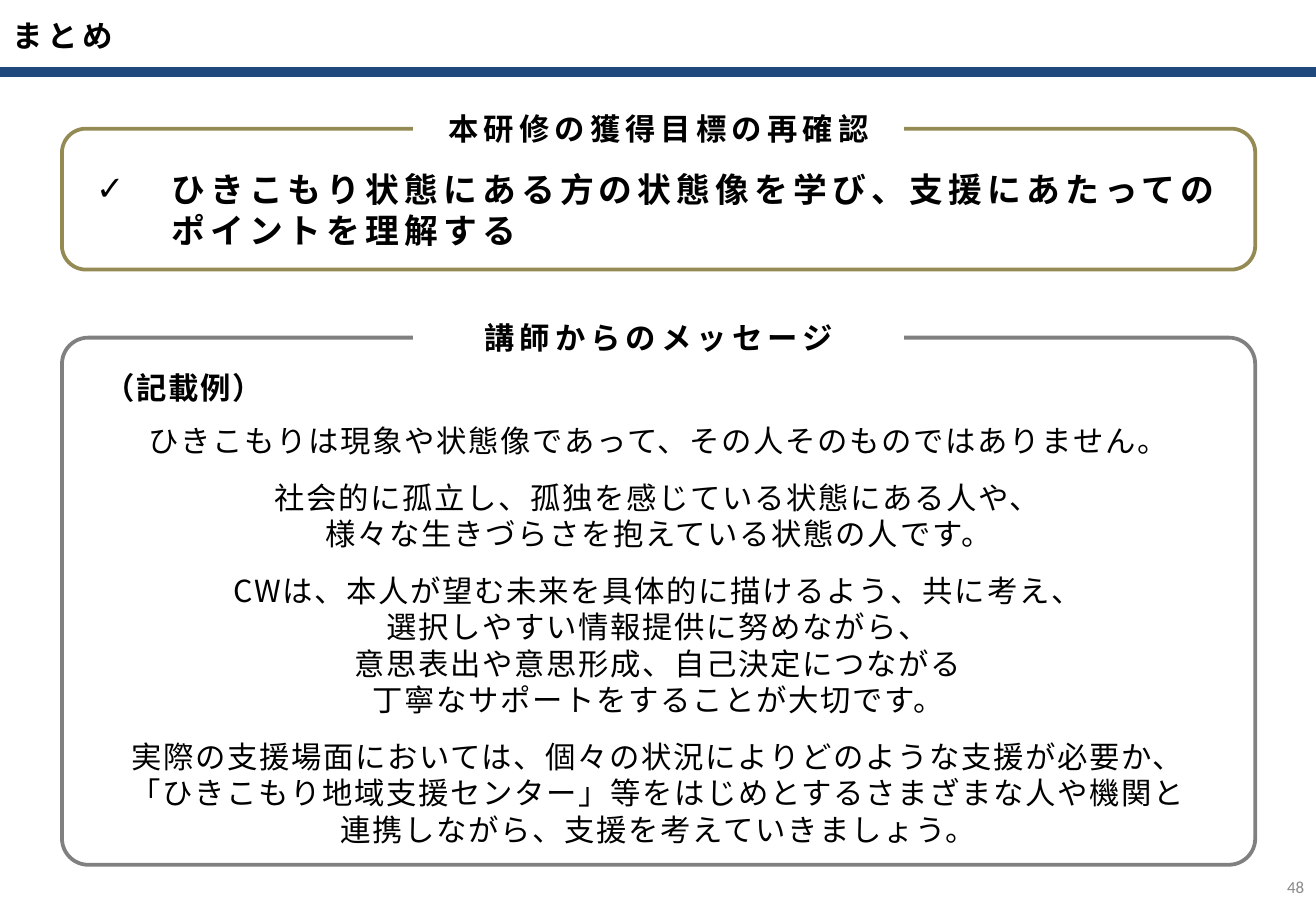
import pptx
import pptx.util
import pptx.dml.color
import pptx.enum.shapes
import pptx.enum.text
import pptx.oxml
import pptx.oxml.ns
from pptx.util import Inches

COLORS = {"navy": "1F497D", "olive": "948A54", "gray": "808080",
          "black": "000000", "number": "898989", "white": "FFFFFF"}
JAPANESE = "Noto Sans CJK JP"
ALIGN = pptx.enum.text.PP_ALIGN
ANCHOR = pptx.enum.text.MSO_ANCHOR
SHAPE = pptx.enum.shapes.MSO_SHAPE
FRAME_LEFT, FRAME_WIDTH = 0.51, 9.82
HEADING_WIDTH, HEADING_HEIGHT = 4.04, 0.4

GOAL = "ひきこもり状態にある方の状態像を学び、支援にあたってのポイントを理解する"
MESSAGES = [
    "ひきこもりは現象や状態像であって、その人そのものではありません。",
    "社会的に孤立し、孤独を感じている状態にある人や、\v様々な生きづらさを抱えている状態の人です。",
    "CWは、本人が望む未来を具体的に描けるよう、共に考え、\v選択しやすい情報提供に努めながら、\v"
    "意思表出や意思形成、自己決定につながる\v丁寧なサポートをすることが大切です。",
    "実際の支援場面においては、個々の状況によりどのような支援が必要か、\v"
    "「ひきこもり地域支援センター」等をはじめとするさまざまな人や機関と\v"
    "連携しながら、支援を考えていきましょう。",
]


def rgb(name):
    return pptx.dml.color.RGBColor.from_string(COLORS[name])


def add_element(parent, tag, **attributes):
    element = pptx.oxml.parse_xml(f"<a:{tag} {pptx.oxml.ns.nsdecls('a')}/>")
    for name, value in attributes.items():
        element.set(name, value)
    parent.append(element)


def place(shape, left, top, width, height):
    shape.left, shape.top = Inches(left), Inches(top)
    shape.width, shape.height = Inches(width), Inches(height)


def write(shape, texts, size=18, bold=False, spacing=0, align=ALIGN.CENTER,
          anchor=ANCHOR.MIDDLE, before=0, font=JAPANESE, color="black",
          bullet=None, hanging=0):
    frame = shape.text_frame
    frame.word_wrap = True
    frame.auto_size = pptx.enum.text.MSO_AUTO_SIZE.NONE
    frame.vertical_anchor = anchor
    frame.margin_left = frame.margin_right = Inches(0.1)
    frame.margin_top = frame.margin_bottom = Inches(0.05)
    for index, text in enumerate(texts):
        paragraph = frame.paragraphs[0] if index == 0 else frame.add_paragraph()
        paragraph.text = text
        paragraph.alignment = align
        paragraph.space_before = pptx.util.Pt(before)
        properties = paragraph._p.get_or_add_pPr()
        properties.set("marL", str(Inches(hanging)))
        properties.set("indent", str(-Inches(hanging)))
        if bullet:
            add_element(properties, "buChar", char=bullet)
        else:
            add_element(properties, "buNone")
        paragraph.font.size = pptx.util.Pt(size)
        paragraph.font.bold = bold
        paragraph.font.name = font
        paragraph.font.color.rgb = rgb(color)
        defaults = properties.find(pptx.oxml.ns.qn("a:defRPr"))
        defaults.set("spc", str(spacing * 100))
        add_element(defaults, "ea", typeface=font)


def add_text(slide, text, left, top, width, height, **style):
    box = slide.shapes.add_textbox(
        Inches(left), Inches(top), Inches(width), Inches(height))
    write(box, [text], **style)


def add_header(slide, width, height):
    rule = slide.shapes.add_connector(
        pptx.enum.shapes.MSO_CONNECTOR.STRAIGHT,
        0, Inches(height), Inches(width), Inches(height))
    rule.line.color.rgb = rgb("navy")
    rule.line.width = pptx.util.Pt(6)
    add_element(rule._element.spPr, "effectLst")
    title = slide.shapes.title
    place(title, 0, 0, width, height)
    write(title, ["まとめ"], bold=True, spacing=3, align=ALIGN.LEFT)


def add_frame(slide, heading, top, height, color, corner):
    outline = slide.shapes.add_shape(
        SHAPE.ROUNDED_RECTANGLE, Inches(FRAME_LEFT), Inches(top),
        Inches(FRAME_WIDTH), Inches(height))
    outline.adjustments[0] = corner
    outline.shadow.inherit = False
    outline.fill.background()
    outline.line.color.rgb = rgb(color)
    outline.line.width = pptx.util.Pt(2.25)
    label = slide.shapes.add_shape(
        SHAPE.RECTANGLE, Inches(FRAME_LEFT + (FRAME_WIDTH - HEADING_WIDTH) / 2),
        Inches(top - HEADING_HEIGHT / 2), Inches(HEADING_WIDTH), Inches(HEADING_HEIGHT))
    label.shadow.inherit = False
    label.fill.solid()
    label.fill.fore_color.rgb = rgb("white")
    label.line.fill.background()
    write(label, [heading], bold=True, spacing=3, anchor=ANCHOR.TOP)


def add_goal(slide, body, top, height):
    add_frame(slide, "本研修の獲得目標の再確認", top, height, "olive", 0.17)
    place(body, FRAME_LEFT + 0.18, top + 0.35, FRAME_WIDTH - 0.36, 0.63)
    write(body, [GOAL], size=20, bold=True, spacing=3, align=ALIGN.LEFT,
          bullet="✓", hanging=0.62)


def add_message(slide, body, top, height):
    add_frame(slide, "講師からのメッセージ", top, height, "gray", 0.05)
    place(body, FRAME_LEFT + 0.16, top + 0.49, FRAME_WIDTH - 0.32, height - 0.43)
    write(body, MESSAGES, spacing=1, before=12)
    add_text(slide, "（記載例）", FRAME_LEFT + 0.21, top + 0.21, 1.58, 0.4,
             bold=True, spacing=1, anchor=ANCHOR.TOP)


def main():
    presentation = pptx.Presentation()
    presentation.slide_width = Inches(10.83)
    presentation.slide_height = Inches(7.5)
    slide = presentation.slides.add_slide(presentation.slide_layouts[3])
    add_header(slide, 10.83, 0.59)
    add_goal(slide, slide.placeholders[1], 1.06, 1.16)
    add_message(slide, slide.placeholders[2], 2.78, 4.34)
    add_text(slide, "48", 10.42, 7.1, 0.41, 0.4, size=10, align=ALIGN.RIGHT,
             font="Calibri", color="number")
    presentation.save("out.pptx")


if __name__ == "__main__":
    main()
